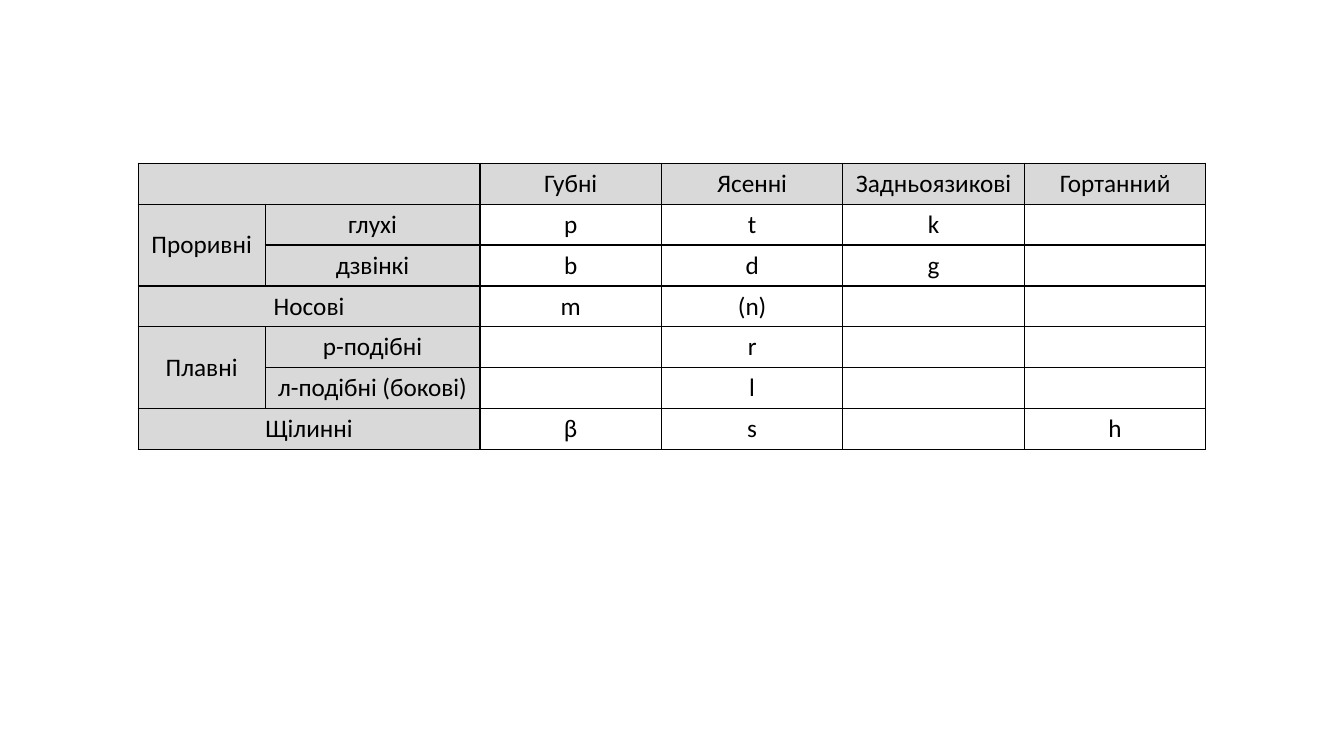
from dataclasses import dataclass

from lxml.etree import SubElement
from pptx import Presentation
from pptx.dml.color import RGBColor
from pptx.enum.text import MSO_ANCHOR, PP_ALIGN
from pptx.oxml.ns import qn
from pptx.util import Inches, Pt


@dataclass(frozen=True)
class Theme:
    font: str = "Calibri"
    size: Pt = Pt(18)
    ink: RGBColor = RGBColor(0x00, 0x00, 0x00)
    heading_fill: RGBColor = RGBColor(0xD9, 0xD9, 0xD9)
    border_width: Pt = Pt(1)


THEME = Theme()

# Consonants by manner (rows) and place of articulation (columns)
CONSONANTS = [
    ["", "", "Губні", "Ясенні", "Задньоязикові", "Гортанний"],
    ["Проривні", "глухі", "p", "t", "k", ""],
    ["", "дзвінкі", "b", "d", "g", ""],
    ["Носові", "", "m", "(n)", "", ""],
    ["Плавні", "р-подібні", "", "r", "", ""],
    ["", "л-подібні (бокові)", "", "l", "", ""],
    ["Щілинні", "", "β", "s", "", "h"],
]
MANNER_COLUMNS = 2
COLUMN_WIDTHS = [1.26, 2.13] + [1.8] * 4
ROW_HEIGHT = 0.4
# First and last cell of each merged heading, as (row, column)
MERGED_HEADINGS = [
    ((0, 0), (0, 1)),
    ((1, 0), (2, 0)),
    ((3, 0), (3, 1)),
    ((4, 0), (5, 0)),
    ((6, 0), (6, 1)),
]


def add_borders(cell):
    """Draw a solid line on all four sides of a cell."""
    properties = cell._tc.get_or_add_tcPr()
    for position, side in enumerate(("lnL", "lnR", "lnT", "lnB")):
        line = SubElement(properties, qn(f"a:{side}"), w=str(THEME.border_width))
        fill = SubElement(line, qn("a:solidFill"))
        SubElement(fill, qn("a:srgbClr"), val=str(THEME.ink))
        # Lines must come before the cell's fill
        properties.insert(position, line)


def format_cell(cell, text, is_heading):
    if is_heading:
        cell.fill.solid()
        cell.fill.fore_color.rgb = THEME.heading_fill
    else:
        cell.fill.background()
    add_borders(cell)
    cell.vertical_anchor = MSO_ANCHOR.MIDDLE
    paragraph = cell.text_frame.paragraphs[0]
    paragraph.text = text
    paragraph.alignment = PP_ALIGN.CENTER
    for run in paragraph.runs:
        run.font.name = THEME.font
        run.font.size = THEME.size
        run.font.color.rgb = THEME.ink


def add_consonant_table(slide, left, top):
    row_count = len(CONSONANTS)
    table = slide.shapes.add_table(
        row_count, len(COLUMN_WIDTHS), Inches(left), Inches(top),
        Inches(sum(COLUMN_WIDTHS)), Inches(ROW_HEIGHT * row_count),
    ).table
    table.first_row = False
    table.horz_banding = False

    # Column widths
    for column, width in zip(table.columns, COLUMN_WIDTHS):
        column.width = Inches(width)

    # Headings and sounds
    for row, texts in enumerate(CONSONANTS):
        for column, text in enumerate(texts):
            is_heading = row == 0 or column < MANNER_COLUMNS
            format_cell(table.cell(row, column), text, is_heading)

    # Merged headings
    for first, last in MERGED_HEADINGS:
        table.cell(*first).merge(table.cell(*last))


def main():
    presentation = Presentation()
    presentation.slide_width = Inches(13.33)
    presentation.slide_height = Inches(7.5)
    blank_layout = presentation.slide_layouts[6]
    slide = presentation.slides.add_slide(blank_layout)
    add_consonant_table(slide, left=1.37, top=1.62)
    presentation.save("out.pptx")


if __name__ == "__main__":
    main()
